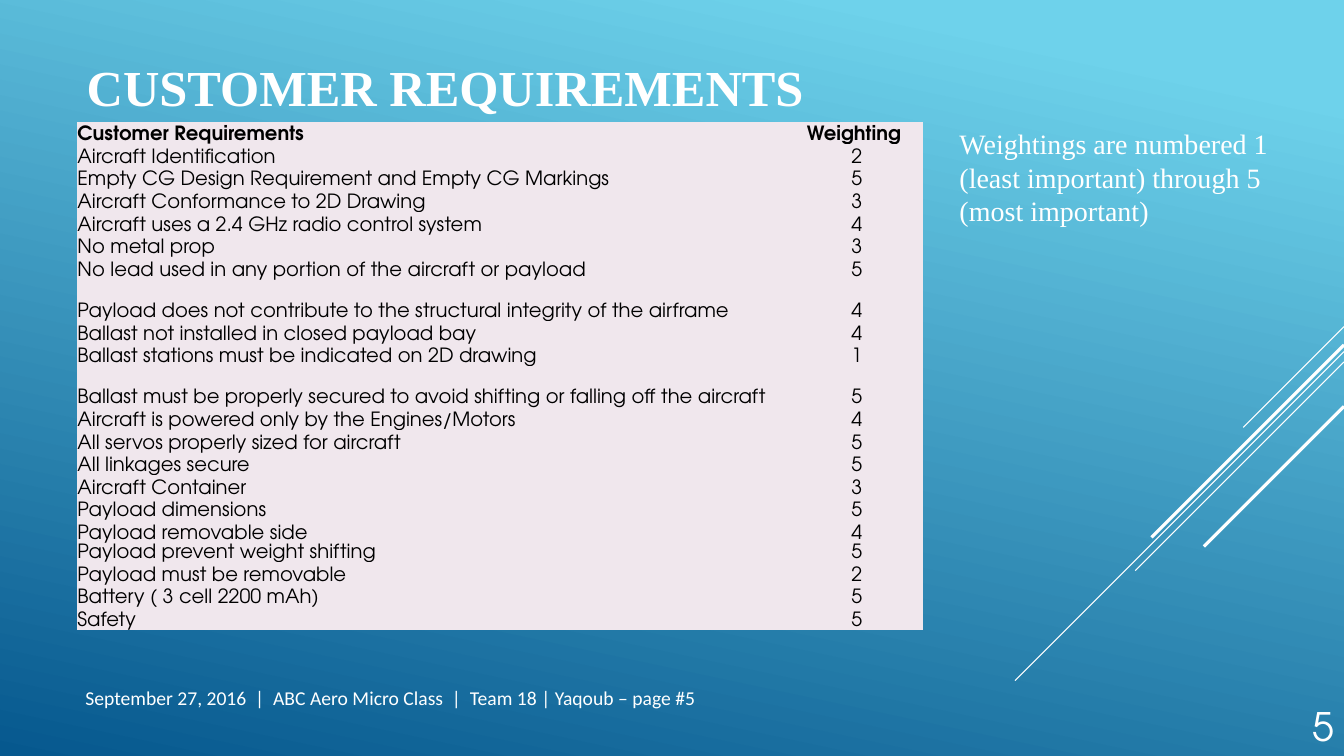
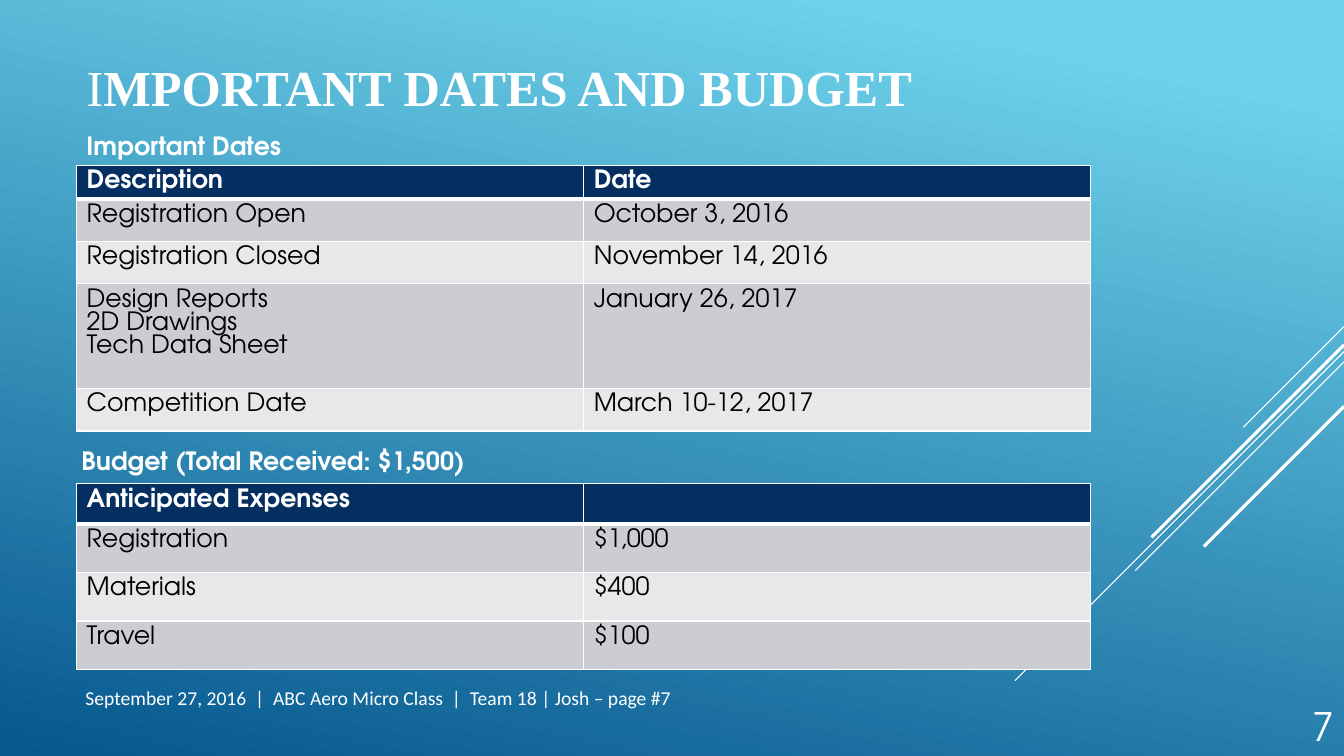
from lxml import etree
from pptx import Presentation
from pptx.dml.color import RGBColor
from pptx.enum.shapes import MSO_CONNECTOR
from pptx.enum.text import MSO_ANCHOR, PP_ALIGN
from pptx.oxml.ns import qn
from pptx.util import Cm, Pt

STRAIGHT = MSO_CONNECTOR.STRAIGHT
TOP, MIDDLE, BOTTOM = MSO_ANCHOR.TOP, MSO_ANCHOR.MIDDLE, MSO_ANCHOR.BOTTOM
LEFT, CENTER, RIGHT = PP_ALIGN.LEFT, PP_ALIGN.CENTER, PP_ALIGN.RIGHT

WHITE = RGBColor(0xFF, 0xFF, 0xFF)
BLACK = RGBColor(0x00, 0x00, 0x00)
SKY = RGBColor(0x6E, 0xD2, 0xEB)
OCEAN = RGBColor(0x06, 0x58, 0x8E)
NAVY = RGBColor(0x05, 0x2F, 0x61)
BLUSH = RGBColor(0xF0, 0xE7, 0xED)
BANDS = (RGBColor(0xCC, 0xCD, 0xD2), RGBColor(0xE7, 0xE8, 0xEA))

SERIF, SANS, FOOTER_FONT = "Times New Roman", "TeX Gyre Adventor", "Calibri"
PAGE_WIDTH, PAGE_HEIGHT = 33.87, 19.05
TABLE_LEFT = 1.93
TIGHT_LINE = 0.92
PLAIN_TABLE_STYLE = "{2D5ABB26-0587-4C30-8999-92F81FD0307C}"

# Diagonals from the right edge: start height, run (both cm), line width (pt)
DIAGONALS = [
    (8.23, 2.54, 0.75),
    (8.86, 8.29, 0.75),
    (9.12, 5.26, 0.75),
    (8.69, 4.85, 2.25),
    (10.24, 3.53, 2.25),
]

REQUIREMENTS = [
    ("Customer Requirements", "Weighting "),
    ("Aircraft Identification", "2"),
    ("Empty CG Design Requirement and Empty CG Markings", "5"),
    ("Aircraft Conformance to 2D Drawing", "3"),
    ("Aircraft uses a 2.4 GHz radio control system", "4"),
    ("No metal prop", "3"),
    ("No lead used in any portion of the aircraft or payload", "5"),
    ("Payload does not contribute to the structural integrity of the airframe", "4"),
    ("Ballast not installed in closed payload bay", "4"),
    ("Ballast stations must be indicated on 2D drawing", "1"),
    ("Ballast must be properly secured to avoid shifting or falling off the aircraft", "5"),
    ("Aircraft is powered only by the Engines/Motors", "4"),
    ("All servos properly sized for aircraft", "5"),
    ("All linkages secure", "5"),
    ("Aircraft Container", "3"),
    ("Payload dimensions", "5"),
    ("Payload removable side", "4"),
    ("Payload prevent weight shifting", "5"),
    ("Payload must be removable", "2"),
    ("Battery ( 3 cell 2200 mAh)", "5"),
    ("Safety", "5"),
]
REQUIREMENT_HEIGHT = 0.57
SPECIAL_HEIGHTS = {7: 1.04, 10: 1.04, 17: 0.48}

DATES = [
    ("Description", "Date"),
    ("Registration Open", "October 3, 2016"),
    ("Registration Closed", "November 14, 2016"),
    ("Design Reports\n2D Drawings\nTech Data Sheet", "January 26, 2017"),
    ("Competition Date", "March 10-12, 2017"),
]
EXPENSES = [
    ("Anticipated Expenses", ""),
    ("Registration", "$1,000"),
    ("Materials", "$400"),
    ("Travel", "$100"),
]


def style_text(frame, font, size, color=WHITE, bold=False, align=LEFT, line=None):
    for para in frame.paragraphs:
        para.alignment = align
        if line:
            para.line_spacing = line
        for span in para.runs:
            span.font.name = font
            span.font.size = Pt(size)
            span.font.bold = bold
            span.font.color.rgb = color


def add_label(page, text, left, top, width, height, font, size,
              bold=False, align=LEFT, anchor=TOP):
    box = page.shapes.add_textbox(Cm(left), Cm(top), Cm(width), Cm(height))
    frame = box.text_frame
    frame.word_wrap = True
    frame.vertical_anchor = anchor
    frame.text = text
    style_text(frame, font, size, bold=bold, align=align)


def add_diagonal(page, top, run, weight):
    line = page.shapes.add_connector(
        STRAIGHT, Cm(PAGE_WIDTH), Cm(top), Cm(PAGE_WIDTH - run), Cm(top + run))
    line.line.color.rgb = WHITE
    line.line.width = Pt(weight)
    etree.SubElement(line.element.spPr, qn("a:effectLst"))


def add_page(deck, title, presenter, number):
    """Add a page with its diagonals, title, footer and page number."""
    page = deck.slides.add_slide(deck.slide_layouts[5])
    for diagonal in DIAGONALS:
        add_diagonal(page, *diagonal)
    heading = page.shapes.title
    heading.left, heading.top = Cm(TABLE_LEFT), Cm(0.91)
    heading.width, heading.height = Cm(21.36), Cm(2.51)
    heading.text_frame.text = title
    heading.text_frame.vertical_anchor = MIDDLE
    style_text(heading.text_frame, SERIF, 36, bold=True)
    footer = f"September 27, 2016  |  ABC Aero Micro Class  |  Team 18 | {presenter} – page #{number}"
    add_label(page, footer, 1.9, 17.15, 20.96, 1.02, FOOTER_FONT, 14)
    add_label(page, str(number), 30.68, 17.15, 3.18, 1.85, SANS, 28,
              align=RIGHT, anchor=BOTTOM)
    return page


def add_plain_table(page, rows, top, widths, heights):
    """Add an unstyled table and return it with its text filled in."""
    frame = page.shapes.add_table(
        len(rows), len(widths), Cm(TABLE_LEFT), Cm(top),
        Cm(sum(widths)), Cm(sum(heights)))
    frame.element.xpath(".//a:tableStyleId")[0].text = PLAIN_TABLE_STYLE
    table = frame.table
    table.first_row = table.horz_banding = False
    for column, width in zip(table.columns, widths):
        column.width = Cm(width)
    for row, height, texts in zip(table.rows, heights, rows):
        row.height = Cm(height)
        for cell, text in zip(row.cells, texts):
            cell.text_frame.text = text
    return table


def fill_cell(cell, color):
    cell.fill.solid()
    cell.fill.fore_color.rgb = color


def set_borders(cell, left=1, right=1, top=1, bottom=1):
    """Draw white cell edges, with widths in points."""
    properties = cell._tc.get_or_add_tcPr()
    for edge, width in zip("LRTB", (left, right, top, bottom)):
        line = etree.SubElement(properties, qn(f"a:ln{edge}"), w=str(Pt(width)))
        fill = etree.SubElement(line, qn("a:solidFill"))
        etree.SubElement(fill, qn("a:srgbClr"), val=str(WHITE))


def add_requirements_table(page):
    heights = [SPECIAL_HEIGHTS.get(index, REQUIREMENT_HEIGHT)
               for index in range(len(REQUIREMENTS))]
    table = add_plain_table(page, REQUIREMENTS, 3.07, (17.98, 3.36), heights)
    for index, row in enumerate(table.rows):
        for cell, align in zip(row.cells, (LEFT, CENTER)):
            cell.margin_left = cell.margin_right = cell.margin_top = Cm(0.02)
            cell.margin_bottom = 0
            cell.vertical_anchor = BOTTOM
            fill_cell(cell, BLUSH)
            style_text(cell.text_frame, SANS, 14, BLACK, index == 0, align,
                       Pt(14 * TIGHT_LINE))


def add_banded_table(page, rows, top, body_heights):
    table = add_plain_table(page, rows, top, (12.78, 12.78), [0.82, *body_heights])
    for index, row in enumerate(table.rows):
        header = index == 0
        for cell in row.cells:
            set_borders(cell, top=3 if index == 1 else 1, bottom=3 if header else 1)
            fill_cell(cell, NAVY if header else BANDS[(index - 1) % 2])
            style_text(cell.text_frame, SANS, 18, WHITE if header else BLACK,
                       header, line=Pt(18 * TIGHT_LINE))


def set_background(deck):
    fill = deck.slide_master.background.fill
    fill.gradient()
    fill.gradient_angle = 258
    for stop, color, position in zip(fill.gradient_stops, (SKY, OCEAN), (0.1, 1)):
        stop.color.rgb = color
        stop.position = position


def main():
    deck = Presentation()
    deck.slide_width, deck.slide_height = Cm(PAGE_WIDTH), Cm(PAGE_HEIGHT)
    set_background(deck)

    page = add_page(deck, "CUSTOMER REQUIREMENTS", "Yaqoub", 5)
    add_requirements_table(page)
    add_label(page, "Weightings are numbered 1 (least important) through 5 (most important)",
              23.93, 3.07, 8.51, 2.82, SERIF, 20)

    page = add_page(deck, "IMPORTANT DATES AND BUDGET", "Josh", 7)
    title = page.shapes.title.text_frame.paragraphs[0]
    initial, rest = title.runs[0], title.add_run()
    initial.text, rest.text = "I", "MPORTANT DATES AND BUDGET"
    style_text(page.shapes.title.text_frame, SERIF, 36, bold=True)
    initial.font.bold = False
    add_label(page, "Important Dates", 1.93, 3.15, 18.31, 1.02, SANS, 18, bold=True)
    add_banded_table(page, DATES, 4.17, (1.07, 1.07, 2.64, 1.07))
    add_label(page, "Budget (Total Received: $1,500)", 1.8, 11.1, 12.78, 1.02,
              SANS, 18, bold=True)
    add_banded_table(page, EXPENSES, 12.19, (1.22, 1.22, 1.22))

    deck.save("out.pptx")


if __name__ == "__main__":
    main()
